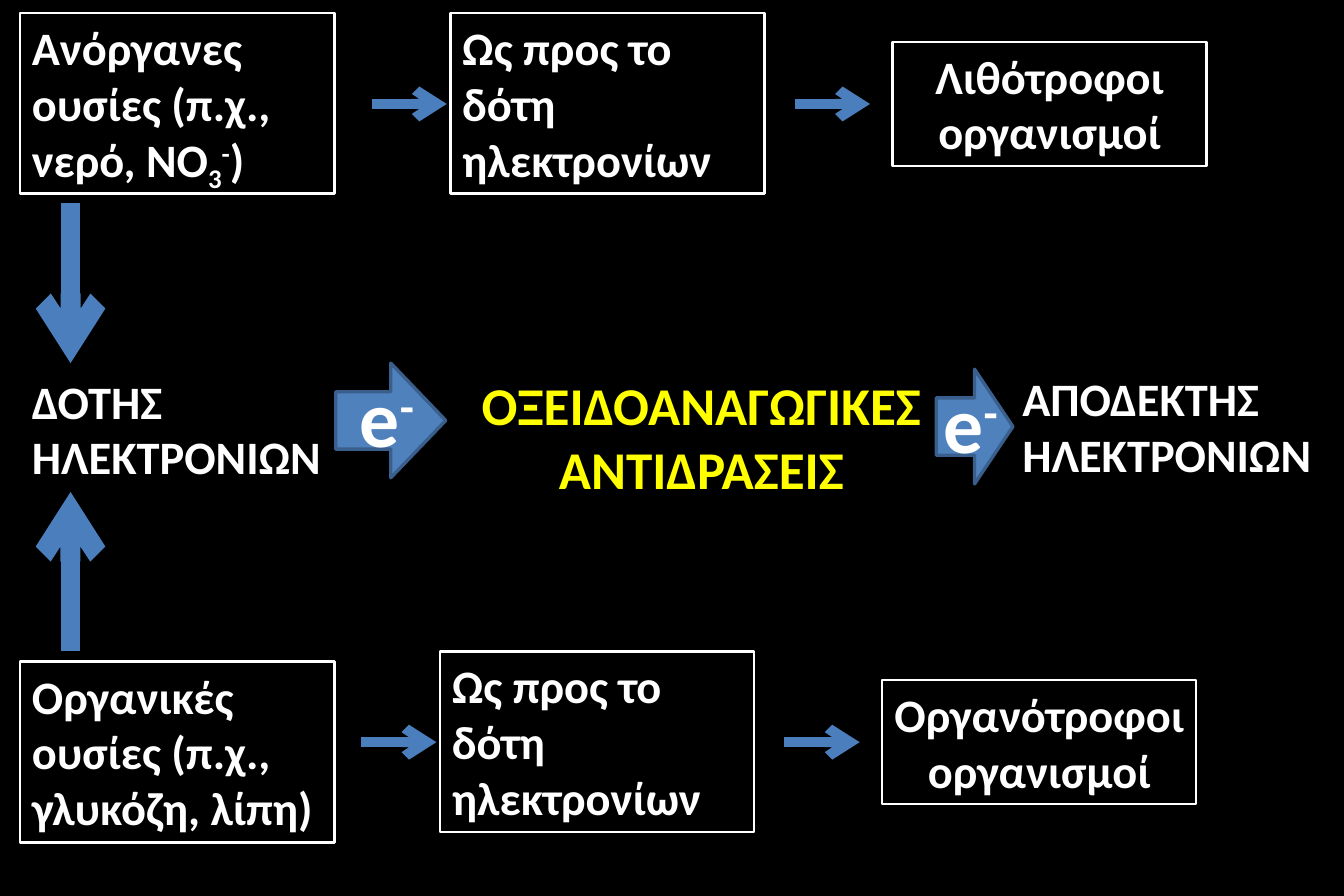
from lxml.etree import SubElement
from pptx import Presentation
from pptx.dml.color import RGBColor
from pptx.enum.shapes import MSO_CONNECTOR, MSO_SHAPE
from pptx.enum.text import MSO_ANCHOR, MSO_AUTO_SIZE, PP_ALIGN
from pptx.oxml.ns import qn
from pptx.util import Cm, Pt

WHITE, YELLOW, BLACK = "FFFFFF", "FFFF00", "000000"
ARROW_FILL, ARROW_EDGE, LINE_BLUE = "4F81BD", "3A5F8C", "4B7EBC"
BOX_WIDTH, TALL, SHORT = 6.68, 3.84, 2.64
MARGIN = 0.43
DONOR_AXIS = 1.5


def color(hex_text):
    return RGBColor.from_string(hex_text)


def write(shape, runs, size=28, hex_text=WHITE, align=PP_ALIGN.LEFT, wrap=True):
    """Fill a shape with runs given as (text, baseline in percent)."""
    frame = shape.text_frame
    frame_format = {"word_wrap": wrap, "vertical_anchor": MSO_ANCHOR.TOP,
                    "auto_size": MSO_AUTO_SIZE.SHAPE_TO_FIT_TEXT}
    for name, value in frame_format.items():
        setattr(frame, name, value)
    paragraph = frame.paragraphs[0]
    paragraph.alignment = align
    for text, baseline in runs:
        run = paragraph.add_run()
        run.text = text
        font_format = {"name": "Calibri", "size": Pt(size), "bold": True}
        for name, value in font_format.items():
            setattr(run.font, name, value)
        run.font.color.rgb = color(hex_text)
        if baseline:
            run._r.get_or_add_rPr().set("baseline", str(baseline * 1000))


def add_label(slide, box, runs, **text_format):
    shape = slide.shapes.add_textbox(*map(Cm, box))
    write(shape, runs, **text_format)


def add_box(slide, box, runs, **text_format):
    shape = slide.shapes.add_shape(MSO_SHAPE.RECTANGLE, *map(Cm, box))
    shape.shadow.inherit = False
    shape.fill.background()
    shape.line.color.rgb = color(WHITE)
    shape.line.width = Pt(1.5)
    write(shape, runs, **text_format)


def add_arrow(slide, start, end, width):
    connector = slide.shapes.add_connector(
        MSO_CONNECTOR.STRAIGHT, *map(Cm, (*start, *end)))
    connector.line.color.rgb = color(LINE_BLUE)
    connector.line.width = Pt(width)
    SubElement(connector.line._get_or_add_ln(), qn("a:tailEnd"), type="arrow")
    SubElement(connector._element.spPr, qn("a:effectLst"))


def add_electron_arrow(slide, left, top, width):
    """Block arrow with the electron sign over its middle."""
    arrow = slide.shapes.add_shape(
        MSO_SHAPE.RIGHT_ARROW, *map(Cm, (left, top, width, 2.44)))
    arrow.shadow.inherit = False
    arrow.fill.solid()
    arrow.fill.fore_color.rgb = color(ARROW_FILL)
    arrow.line.color.rgb = color(ARROW_EDGE)
    arrow.line.width = Pt(2)
    sign_width = 1.7
    sign_left = left + (width - sign_width) / 2 - 0.06
    add_label(slide, (sign_left, top - 0.03, sign_width, 2.31),
              [("e", 0), ("-", 30)], size=48, wrap=False)


def add_chain(slide, left, top, organisms):
    """Arrow, criterion, arrow, resulting group of organisms."""
    for offset in (0, 9):
        add_arrow(slide, (left + offset, top + 1.93),
                  (left + offset + 1.6, top + 1.93), 6)
    add_box(slide, (left + 1.68, top, BOX_WIDTH, TALL),
            [("Ως προς το δότη ηλεκτρονίων", 0)])
    add_box(slide, (left + 11.08, top + 0.61, BOX_WIDTH, SHORT),
            [(organisms, 0)], align=PP_ALIGN.CENTER)


def add_reaction_row(slide, top):
    """Donor, electron, redox reactions, electron, acceptor."""
    add_label(slide, (9.14, top, 11.56, 2.97),
              [("ΟΞΕΙΔΟΑΝΑΓΩΓΙΚΕΣ ΑΝΤΙΔΡΑΣΕΙΣ", 0)],
              size=32, hex_text=YELLOW, align=PP_ALIGN.CENTER)
    add_electron_arrow(slide, 7.14, top - 0.08, 2.34)
    add_electron_arrow(slide, 19.91, top + 0.05, 1.63)
    add_label(slide, (MARGIN, top, BOX_WIDTH, SHORT), [("ΔΟΤΗΣ ΗΛΕΚΤΡΟΝΙΩΝ", 0)])
    add_label(slide, (21.49, top - 0.05, BOX_WIDTH, SHORT),
              [("ΑΠΟΔΕΚΤΗΣ ΗΛΕΚΤΡΟΝΙΩΝ", 0)])


def add_source(slide, top, runs, arrow_start, arrow_end):
    """Kind of substance with the arrow that leads to the donor."""
    add_box(slide, (MARGIN, top, BOX_WIDTH, TALL), runs)
    add_arrow(slide, (DONOR_AXIS, arrow_start), (DONOR_AXIS, arrow_end), 12)


def main():
    presentation = Presentation()
    presentation.slide_width, presentation.slide_height = Cm(28.58), Cm(19.05)
    slide = presentation.slides.add_slide(presentation.slide_layouts[6])
    slide.background.fill.solid()
    slide.background.fill.fore_color.rgb = color(BLACK)

    # Middle row
    add_reaction_row(slide, 7.8)

    # Inorganic substances, above
    add_source(slide, 0.28, [("Ανόργανες ουσίες (π.χ., νερό, ΝΟ", 0), ("3", -25),
                             ("-", 30), (")", 0)], 4.32, 7.72)
    add_chain(slide, 7.9, 0.28, "Λιθότροφοι οργανισμοί")

    # Organic substances, below
    add_source(slide, 14.07, [("Οργανικές ουσίες (π.χ., γλυκόζη, λίπη)", 0)],
               13.85, 10.46)
    add_chain(slide, 7.68, 13.85, "Οργανότροφοι οργανισμοί")

    presentation.save("out.pptx")


if __name__ == "__main__":
    main()
